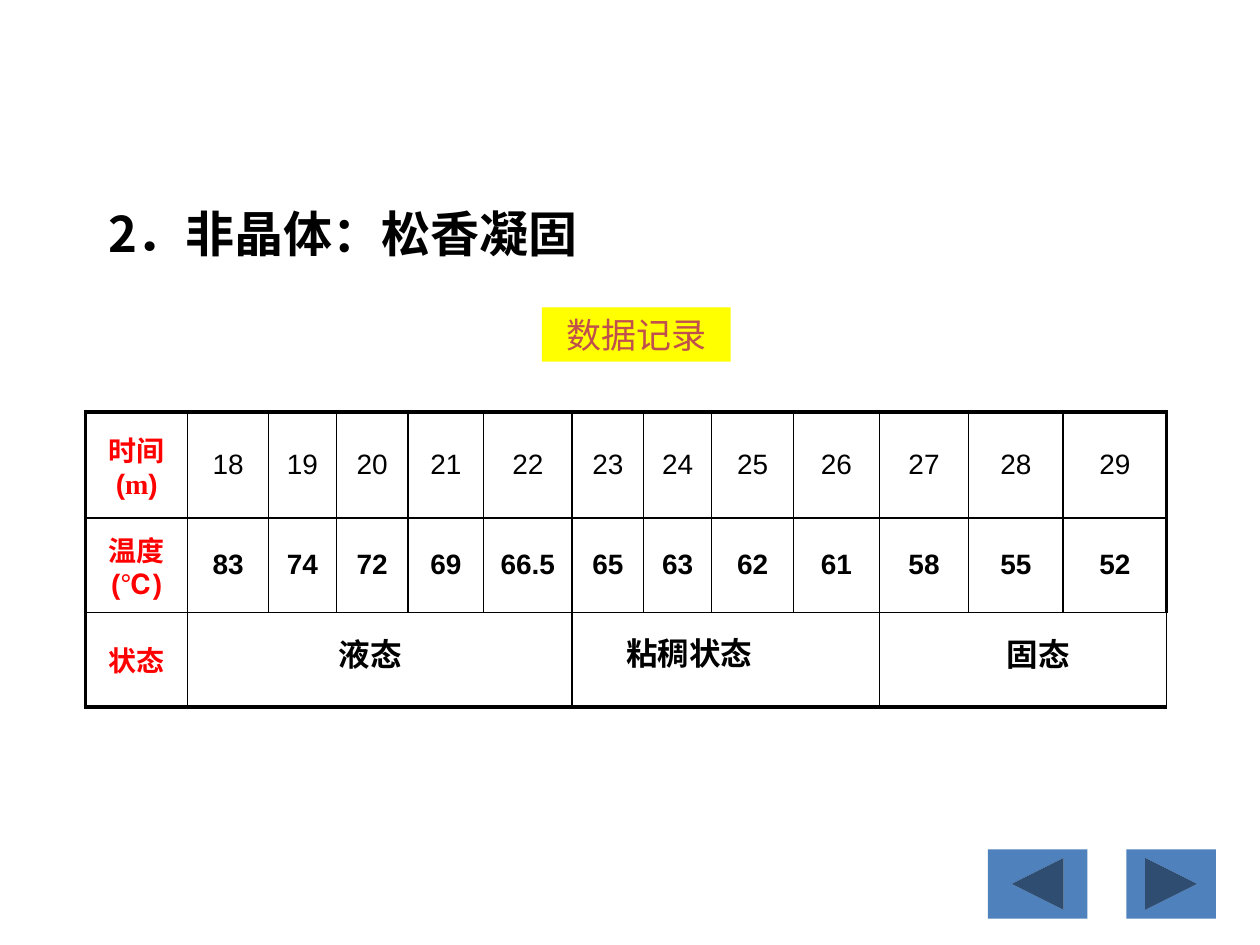
from lxml import etree
from pptx import Presentation
from pptx.dml.color import RGBColor
from pptx.enum import shapes, text
from pptx.oxml import ns
from pptx.util import Inches, Pt

BLACK = RGBColor(0x00, 0x00, 0x00)
RED = RGBColor(0xFF, 0x00, 0x00)
YELLOW = RGBColor(0xFF, 0xFF, 0x00)
BRICK = RGBColor(0xC0, 0x50, 0x4D)
BLUE = RGBColor(0x4F, 0x81, 0xBD)

COLUMN_WIDTHS = [0.81, 0.64, 0.54, 0.57, 0.6, 0.7, 0.57,
                 0.54, 0.65, 0.68, 0.71, 0.75, 0.82]
ROW_HEIGHTS = [0.84, 0.75, 0.75]
TIMES = range(18, 30)
TEMPERATURES = [83, 74, 72, 69, 66.5, 65, 63, 62, 61, 58, 55, 52]
STATE_SPANS = [(1, 5), (6, 9), (10, 12)]  # first and last column of each state


def add_run(paragraph, words, size, font, color, bold=False):
    run = paragraph.add_run()
    run.text = words
    run.font.size = Pt(size)
    run.font.name = font
    run.font.color.rgb = color
    run.font.bold = bold


def add_label(slide, box, words, size, font):
    label = slide.shapes.add_textbox(*map(Inches, box))
    label.text_frame.word_wrap = True
    add_run(label.text_frame.paragraphs[0], words, size, font, BLACK, bold=True)


def add_filled_shape(slide, kind, box, color):
    shape = slide.shapes.add_shape(kind, *map(Inches, box))
    shape.shadow.inherit = False
    shape.fill.solid()
    shape.fill.fore_color.rgb = color
    shape.line.fill.background()
    return shape


def set_borders(cell, widths):
    """Draw the left, right, top and bottom borders, widths in points."""
    properties = cell._tc.get_or_add_tcPr()
    for index, (side, width) in enumerate(zip("LRTB", widths)):
        line = etree.Element(ns.qn(f"a:ln{side}"), w=str(Pt(width)))
        fill = etree.SubElement(line, ns.qn("a:solidFill"))
        etree.SubElement(fill, ns.qn("a:srgbClr"), val=str(BLACK))
        properties.insert(index, line)


def fill_cell(cell, runs, color, bold):
    cell.vertical_anchor = text.MSO_ANCHOR.MIDDLE
    paragraph = cell.text_frame.paragraphs[0]
    paragraph.alignment = text.PP_ALIGN.CENTER
    for words, font in runs:
        add_run(paragraph, words, 16, font, color, bold)


def add_record_table(slide, box):
    rows, columns = len(ROW_HEIGHTS), len(COLUMN_WIDTHS)
    table = slide.shapes.add_table(rows, columns, *map(Inches, box)).table
    table.first_row = table.horz_banding = False
    for column, width in zip(table.columns, COLUMN_WIDTHS):
        column.width = Inches(width)
    for row, height in zip(table.rows, ROW_HEIGHTS):
        row.height = Inches(height)

    # Thick outer frame, thin inner grid
    for r in range(rows):
        for c in range(columns):
            cell = table.cell(r, c)
            cell.fill.background()
            outer = (c == 0, c == columns - 1, r == 0, r == rows - 1)
            set_borders(cell, [2.25 if edge else 1 for edge in outer])
    for first, last in STATE_SPANS:
        table.cell(2, first).merge(table.cell(2, last))

    # Row headings
    headings = [
        [("时间(", "Arial"), ("m", "Times New Roman"), (")", "Arial")],
        [("温度(℃)", "Arial")],
        [("状态", "Arial")],
    ]
    for r, runs in enumerate(headings):
        fill_cell(table.cell(r, 0), runs, RED, True)

    # Readings
    for c, (time, temperature) in enumerate(zip(TIMES, TEMPERATURES), start=1):
        fill_cell(table.cell(0, c), [(str(time), "Arial")], BLACK, False)
        fill_cell(table.cell(1, c), [(str(temperature), "Arial")], BLACK, True)


def add_caption(slide, box):
    caption = add_filled_shape(slide, shapes.MSO_SHAPE.RECTANGLE, box, YELLOW)
    paragraph = caption.text_frame.paragraphs[0]
    paragraph.alignment = text.PP_ALIGN.CENTER
    add_run(paragraph, "数据记录", 20, "Calibri", BRICK)


def add_state_labels(slide):
    for words, left, top, width in [("固态", 7.89, 4.99, 0.83),
                                    ("液态", 2.59, 4.99, 0.83),
                                    ("粘稠状态", 4.87, 4.98, 1.28)]:
        add_label(slide, (left, top, width, 0.4), words, 18, "Calibri")


def add_navigation(slide, top, height):
    kinds = shapes.MSO_SHAPE
    for kind, left, width in [
        (kinds.ACTION_BUTTON_FORWARD_OR_NEXT, 8.94, 0.71),
        (kinds.ACTION_BUTTON_BACK_OR_PREVIOUS, 7.84, 0.79),
    ]:
        add_filled_shape(slide, kind, (left, top, width, height), BLUE)


def main():
    deck = Presentation()
    deck.slide_width, deck.slide_height = Inches(10), Inches(7.5)
    slide = deck.slides.add_slide(deck.slide_layouts[6])
    add_label(slide, (0.76, 1.57, 4.33, 0.57), "2．非晶体：松香凝固",
              28, "Noto Sans CJK SC")
    add_record_table(slide, (0.68, 3.27, 8.58, 2.34))
    add_caption(slide, (4.3, 2.44, 1.5, 0.43))
    add_state_labels(slide)
    add_navigation(slide, 6.74, 0.55)
    deck.save("out.pptx")


if __name__ == "__main__":
    main()
